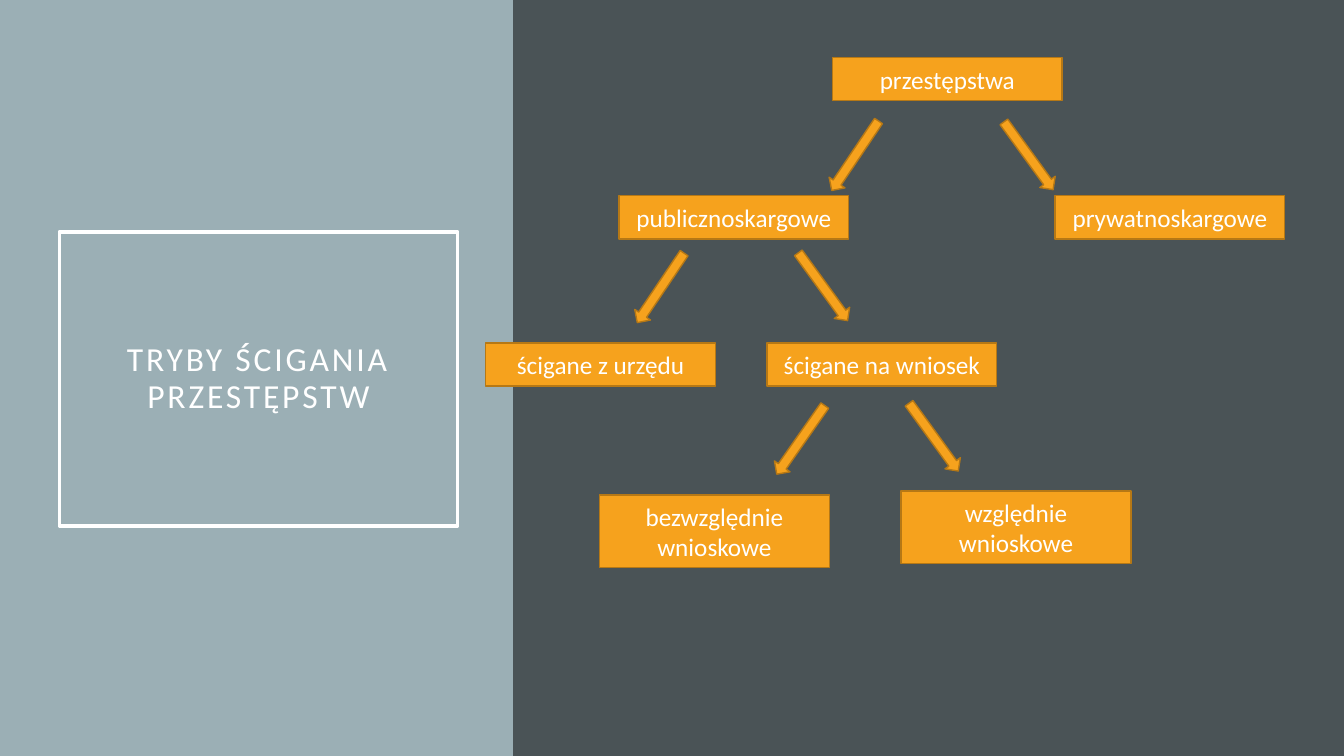
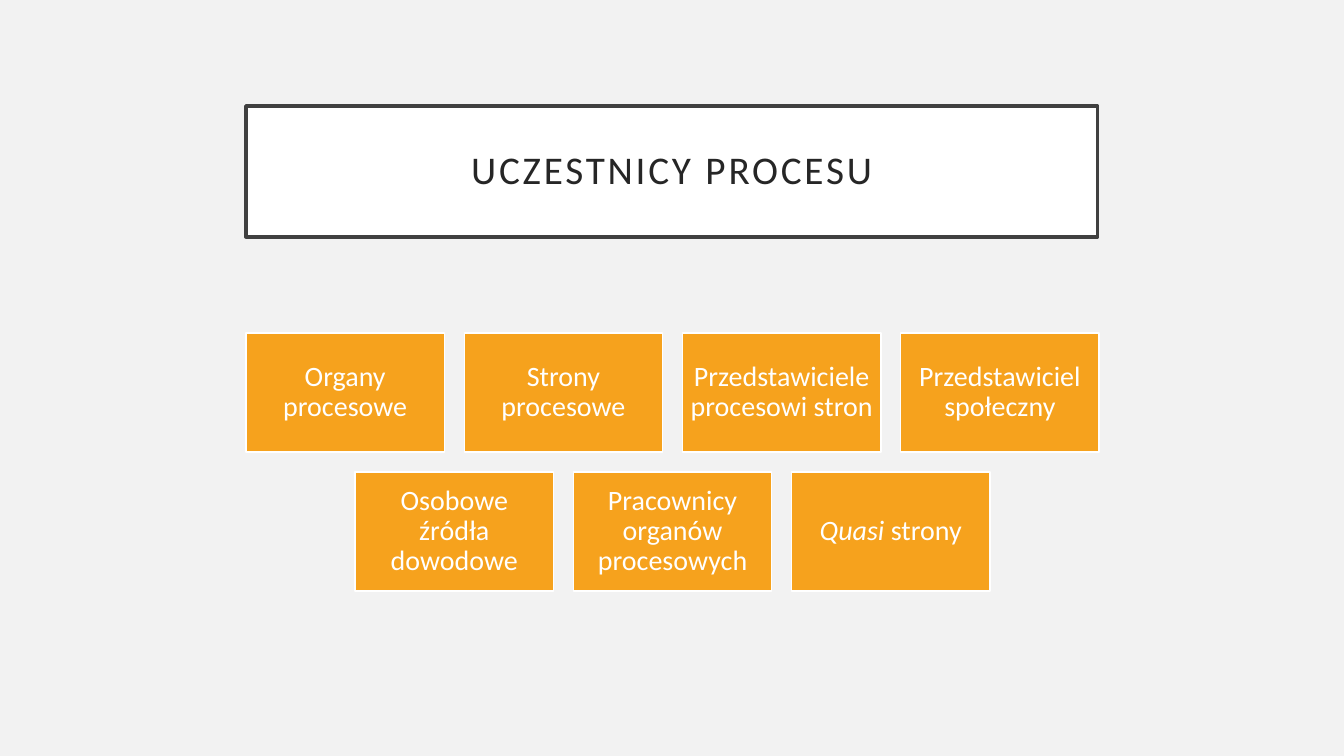
import pptx
import pptx.util
import pptx.dml.color
import pptx.enum.shapes
import pptx.enum.text

Cm = pptx.util.Cm
Pt = pptx.util.Pt
KIND = pptx.enum.shapes.MSO_SHAPE

WIDE, HIGH = 33.87, 19.05
SPLIT = 12.93
FONT = "Calibri"
WHITE = "FFFFFF"
DARK = "4A5356"
MIST = "9BAFB5"
PALE = "F2F2F2"
GOLD = "F6A21D"
RUST = "B67815"
EDGE = "404040"
INK = "262626"

NODES = [
    ("przestępstwa", 8.05, 1.45, 1.09),
    ("publicznoskargowe", 2.67, 4.93, 1.09),
    ("prywatnoskargowe", 13.66, 4.93, 1.09),
    ("ścigane z urzędu", -0.69, 8.64, 1.09),
    ("ścigane na wniosek", 6.4, 8.64, 1.09),
    ("bezwzględnie wnioskowe", 2.18, 12.47, 1.83),
    ("względnie wnioskowe", 9.78, 12.37, 1.83),
]
ARROWS = [
    (8.38, 2.87, 34),
    (12.75, 2.87, 324),
    (3.48, 6.2, 34),
    (7.57, 6.17, 324),
    (10.36, 9.96, 324),
    (7.01, 10.03, 35),
]
ROWS = [
    [("", "Organy procesowe"), ("", "Strony procesowe"),
     ("", "Przedstawiciele procesowi stron"), ("", "Przedstawiciel społeczny")],
    [("", "Osobowe źródła dowodowe"), ("", "Pracownicy organów procesowych"),
     ("Quasi ", "strony")],
]


def tint(code):
    return pptx.dml.color.RGBColor.from_string(code)


def paint(shape, fill=None, line=None, width=1):
    if fill:
        shape.fill.solid()
        shape.fill.fore_color.rgb = tint(fill)
    else:
        shape.fill.background()
    if line:
        shape.line.color.rgb = tint(line)
        shape.line.width = Pt(width)
    else:
        shape.line.fill.background()


def write(shape, text, size=18, color=WHITE, lead="", space=1.0, track=0, pad=None):
    frame = shape.text_frame
    frame.word_wrap = True
    frame.auto_size = pptx.enum.text.MSO_AUTO_SIZE.NONE
    frame.vertical_anchor = pptx.enum.text.MSO_ANCHOR.MIDDLE
    if pad is not None:
        frame.margin_left = frame.margin_right = Cm(pad)
        frame.margin_top = frame.margin_bottom = Cm(pad)
    para = frame.paragraphs[0]
    para.alignment = pptx.enum.text.PP_ALIGN.CENTER
    para.line_spacing = space
    for part, slant in ((lead, True), (text, False)):
        if part:
            run = para.add_run()
            run.text = part
            run.font.name = FONT
            run.font.size = Pt(size)
            run.font.italic = slant
            run.font.color.rgb = tint(color)
            if track:
                run.font._element.set("spc", str(track * 100))


def draw(slide, kind, box, **look):
    shape = slide.shapes.add_shape(kind, *map(Cm, box))
    shape.shadow.inherit = False
    paint(shape, **look)
    return shape


def start(deck, back):
    slide = deck.slides.add_slide(deck.slide_layouts[5])
    slide.background.fill.solid()
    slide.background.fill.fore_color.rgb = tint(back)
    return slide


def head(slide, box, text, size, color, line, fill=None):
    title = slide.shapes.title
    title.left, title.top, title.width, title.height = map(Cm, box)
    paint(title, fill, line, 2.5)
    write(title, text, size=size, color=color, space=0.9, track=2, pad=0.51)
    title.element.getparent().append(title.element)


def tree(slide, box):
    left, top = box[:2]
    draw(slide, KIND.RECTANGLE, box, fill=DARK)
    for text, x, y, high in NODES:
        node = draw(slide, KIND.RECTANGLE, (left + x, top + y, 5.79, high),
                    fill=GOLD, line=RUST)
        write(node, text)
    for x, y, turn in ARROWS:
        arrow = draw(slide, KIND.DOWN_ARROW, (left + x, top + y, 0.48, 2.11),
                     fill=GOLD, line=RUST)
        arrow.rotation = turn


def grid(slide, box, gap=0.5):
    left, top, wide, high = box
    most = max(map(len, ROWS))
    tile_w = (wide - gap * (most - 1)) / most
    tile_h = (high - gap * (len(ROWS) - 1)) / len(ROWS)
    for i, row in enumerate(ROWS):
        inset = (most - len(row)) * (tile_w + gap) / 2
        for j, (lead, text) in enumerate(row):
            x = left + inset + j * (tile_w + gap)
            y = top + i * (tile_h + gap)
            tile = draw(slide, KIND.RECTANGLE, (x, y, tile_w, tile_h),
                        fill=GOLD, line=WHITE)
            write(tile, text, size=20, lead=lead, space=0.9, pad=0.2)


def modes(deck):
    slide = start(deck, DARK)
    draw(slide, KIND.RECTANGLE, (0, 0, SPLIT, HIGH), fill=MIST)
    head(slide, (1.5, 5.84, 10.03, 7.42), "TRYBY ŚCIGANIA PRZESTĘPSTW",
         24, WHITE, WHITE)
    tree(slide, (SPLIT, 0, WIDE - SPLIT, HIGH))


def roles(deck):
    slide = start(deck, PALE)
    head(slide, (6.2, 2.67, 21.46, 3.3), "UCZESTNICY PROCESU",
         28, INK, EDGE, fill=WHITE)
    grid(slide, (6.2, 8.39, 21.5, 6.5))


def main():
    deck = pptx.Presentation()
    deck.slide_width, deck.slide_height = Cm(WIDE), Cm(HIGH)
    modes(deck)
    roles(deck)
    deck.save("out.pptx")


if __name__ == "__main__":
    main()
